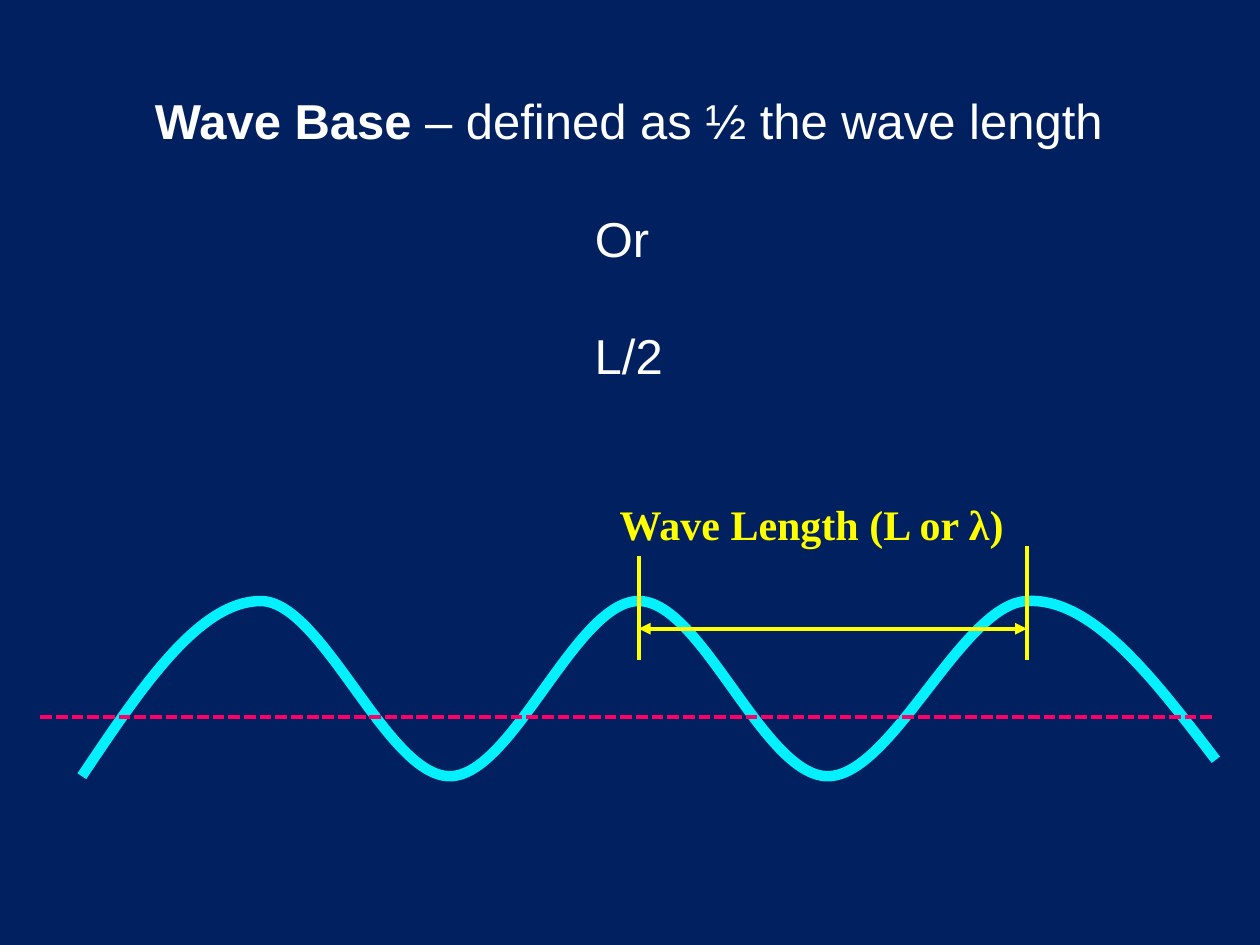
from lxml import etree
from pptx import Presentation
from pptx import util as u
from pptx.dml.color import RGBColor
from pptx.enum import dml, shapes, text
from pptx.oxml.ns import qn

LEFT_CREST, RIGHT_CREST = 5.07, 8.15
WAVE_START = (0.65, 6.16)
# Each curve: two control points and an end point, in inches.
WAVE_CURVES = [
    ((1.12, 5.46), (1.58, 4.77), (2.07, 4.77)),
    ((2.56, 4.77), (3.07, 6.16), (3.57, 6.16)),
    ((4.07, 6.16), (4.57, 4.77), (LEFT_CREST, 4.77)),
    ((5.57, 4.77), (6.06, 6.16), (6.57, 6.16)),
    ((7.08, 6.16), (7.64, 4.79), (RIGHT_CREST, 4.77)),
    ((8.67, 4.74), (9.16, 5.39), (9.65, 6.03)),
]


def color(value):
    return RGBColor.from_string(value)


def inches(values):
    return [u.Inches(value) for value in values]


def add_span(para, content, font, size, fill, bold=False):
    span = para.add_run()
    span.text = content
    span.font.name = font
    span.font.size = u.Pt(size)
    span.font.bold = bold
    span.font.color.rgb = color(fill)


def bend_segments(outline):
    """Turn every three straight segments into one cubic curve."""
    segments = list(outline.iter(qn("a:lnTo")))
    for index in range(0, len(segments), 3):
        curve = etree.Element(qn("a:cubicBezTo"))
        segments[index].addprevious(curve)
        for segment in segments[index:index + 3]:
            curve.append(segment[0])
            segment.getparent().remove(segment)


class WaveSlide:
    background = "002060"
    white = "FFFFFF"
    yellow = "FFFF00"
    cyan = "04F0FC"
    pink = "FF0066"
    line_width = 2.25

    def __init__(self, deck):
        self.slide = deck.slides.add_slide(deck.slide_layouts[5])
        fill = self.slide.background.fill
        fill.solid()
        fill.fore_color.rgb = color(self.background)
        self.diagram = self.slide.shapes.add_group_shape()

    def title(self, left, top, width, height, lines, gap):
        """Fill the title; each line is a list of (words, bold) pairs."""
        box = self.slide.shapes.title
        box.left, box.top, box.width, box.height = inches(
            (left, top, width, height))
        frame = box.text_frame
        frame.word_wrap = True
        frame.auto_size = text.MSO_AUTO_SIZE.NONE
        frame.vertical_anchor = text.MSO_ANCHOR.TOP
        for index, spans in enumerate(lines):
            para = frame.add_paragraph() if index else frame.paragraphs[0]
            para.alignment = text.PP_ALIGN.CENTER
            if index:
                para.space_before = u.Pt(gap)
            for words, bold in spans:
                add_span(para, words, font="Arial", size=28,
                         fill=self.white, bold=bold)

    def wave(self, start, curves):
        builder = self.diagram.shapes.build_freeform(*inches(start))
        builder.add_line_segments(
            [inches(point) for curve in curves for point in curve],
            close=False)
        wave = builder.convert_to_shape()
        bend_segments(wave._element)
        wave.shadow.inherit = False
        wave.fill.background()
        wave.line.color.rgb = color(self.cyan)
        wave.line.width = u.Pt(6)

    def line(self, start, end, stroke, dash=None, arrows=False):
        connector = self.diagram.shapes.add_connector(
            shapes.MSO_CONNECTOR.STRAIGHT, *inches(start + end))
        connector.line.color.rgb = color(stroke)
        connector.line.width = u.Pt(self.line_width)
        if dash:
            connector.line.dash_style = dash
        properties = connector._element.spPr
        if arrows:
            outline = properties.find(qn("a:ln"))
            for tag in ("a:headEnd", "a:tailEnd"):
                etree.SubElement(outline, qn(tag), type="triangle")
        etree.SubElement(properties, qn("a:effectLst"))

    def label(self, left, top, width, height, content):
        box = self.diagram.shapes.add_textbox(
            *inches((left, top, width, height)))
        frame = box.text_frame
        frame.word_wrap = False
        add_span(frame.paragraphs[0], content, font="Times New Roman",
                 size=24, fill=self.yellow, bold=True)


def main():
    deck = Presentation()
    deck.slide_width, deck.slide_height = u.Inches(10), u.Inches(7.5)
    page = WaveSlide(deck)
    page.title(0.74, 0.67, 8.5, 2.46, [
        [("Wave Base ", True), ("– defined as ½ the wave length", False)],
        [("Or ", False)],
        [("L/2", False)],
    ], gap=33.5)
    page.wave(WAVE_START, WAVE_CURVES)
    page.line((LEFT_CREST, 4.99), (RIGHT_CREST, 4.99), page.yellow,
              arrows=True)
    for crest, top in ((LEFT_CREST, 4.41), (RIGHT_CREST, 4.33)):
        page.line((crest, top), (crest, 5.24), page.yellow)
    page.label(4.82, 3.91, 3.39, 0.91, "Wave Length (L or λ)")
    page.line((0.32, 5.69), (9.65, 5.69), page.pink,
              dash=dml.MSO_LINE.SQUARE_DOT)
    deck.save("out.pptx")


if __name__ == "__main__":
    main()
